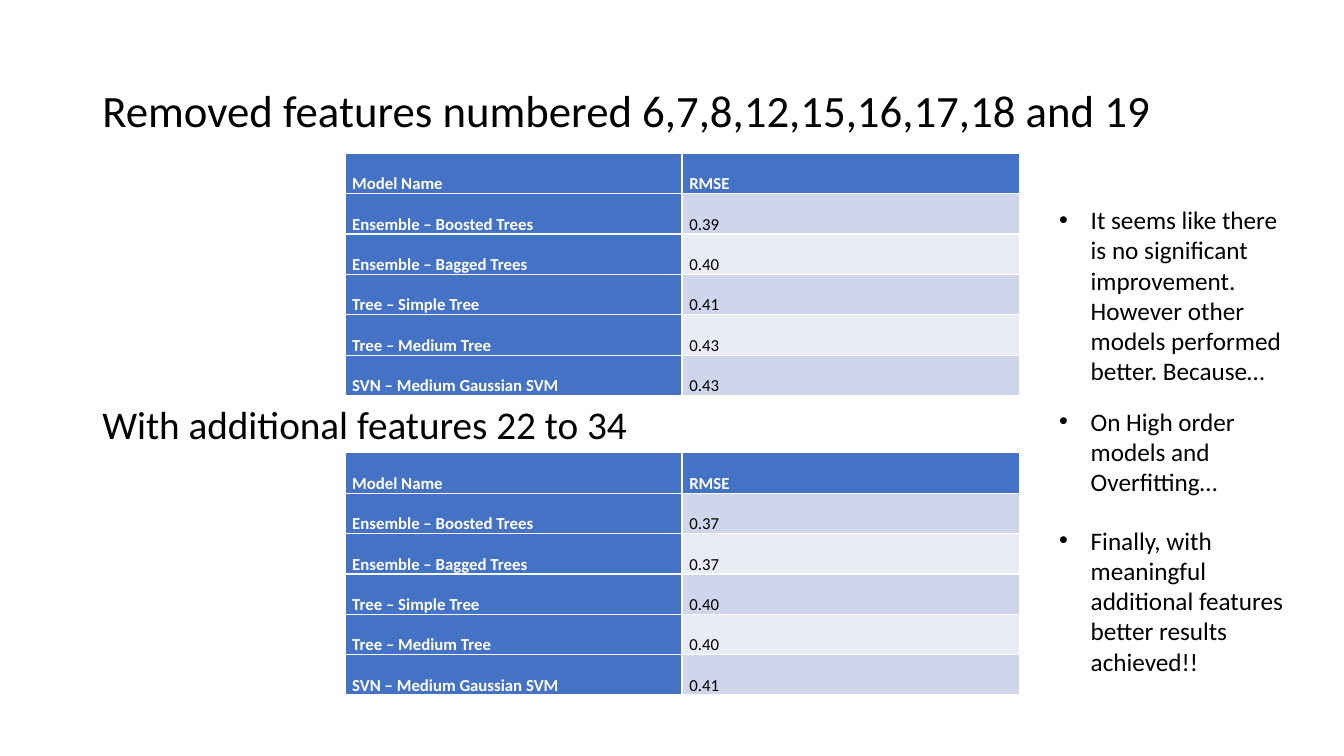
"""Build a slide comparing model RMSE for two feature sets, with remarks."""
from pptx import Presentation
from pptx.dml.color import RGBColor
from pptx.enum.text import MSO_ANCHOR, PP_ALIGN
from pptx.oxml.ns import qn
from pptx.util import Pt
from lxml.etree import SubElement

COLORS = {"text": "000000", "white": "FFFFFF", "blue": "4472C4",
          "odd": "CFD5EA", "even": "E9EBF5"}
MODELS = ["Ensemble – Boosted Trees", "Ensemble – Bagged Trees", "Tree – Simple Tree",
          "Tree – Medium Tree", "SVN – Medium Gaussian SVM"]
TABLES = [(109.5, 26.8, ["0.39", "0.40", "0.41", "0.43", "0.43"]),
          (323.5, 27.4, ["0.37", "0.37", "0.40", "0.40", "0.41"])]
REMARKS = [
    (142.5, 183.6, 138.2, "It seems like there is no significant improvement. "
                          "However other models performed better. Because…"),
    (286.5, 172, 72.7, "On High order models and Overfitting…"),
    (371.5, 189.4, 116.6, "Finally, with meaningful additional features better results achieved!!"),
]


def add_run(p, text, size, color="text", bold=False):
    r = p.add_run()
    r.text = text
    r.font.name = "Calibri"
    r.font.size = Pt(size)
    r.font.bold = bold
    r.font.color.rgb = RGBColor.from_string(COLORS[color])


def add_text(left, top, width, height, text, size, wrap=True):
    tf = s.shapes.add_textbox(Pt(left), Pt(top), Pt(width), Pt(height)).text_frame
    tf.word_wrap = wrap
    add_run(tf.paragraphs[0], text, size)
    return tf


prs = Presentation()
prs.slide_width, prs.slide_height = Pt(960), Pt(540)
s = prs.slides.add_slide(prs.slide_layouts[6])

title = add_text(66, 28.75, 828, 104.4,
                 "Removed features numbered 6,7,8,12,15,16,17,18 and 19", 32)
title.vertical_anchor = MSO_ANCHOR.MIDDLE
title.paragraphs[0].line_spacing = 0.9
add_text(66, 282.5, 394, 41.2, "With additional features 22 to 34", 28, wrap=False)

for top, row_height, scores in TABLES:
    rows = [("Model Name", "RMSE"), *zip(MODELS, scores)]
    table = s.shapes.add_table(len(rows), 2, Pt(246.4), Pt(top),
                               Pt(481.6), Pt(row_height * len(rows))).table
    table.first_col = True
    for i, row in enumerate(rows):
        table.rows[i].height = Pt(row_height)
        for j, value in enumerate(row):
            cell = table.cell(i, j)
            heading = i == 0 or j == 0
            fill = "blue" if heading else "odd" if i % 2 else "even"
            cell.fill.solid()
            cell.fill.fore_color.rgb = RGBColor.from_string(COLORS[fill])
            cell.margin_left = cell.margin_right = Pt(5.2)
            cell.margin_top = cell.margin_bottom = Pt(0)
            p = cell.text_frame.paragraphs[0]
            p.alignment = PP_ALIGN.JUSTIFY
            p.line_spacing = 2.0
            add_run(p, value, 12, "white" if heading else "text", heading)

for top, width, height, remark in REMARKS:
    p = add_text(749.5, top, width, height, remark, 18).paragraphs[0]
    pPr = p._p.get_or_add_pPr()
    pPr.set("marL", str(Pt(22.5)))
    pPr.set("indent", str(-Pt(22.5)))
    SubElement(pPr, qn("a:buFont"), typeface="Arial")
    SubElement(pPr, qn("a:buChar"), char="•")

prs.save("out.pptx")
